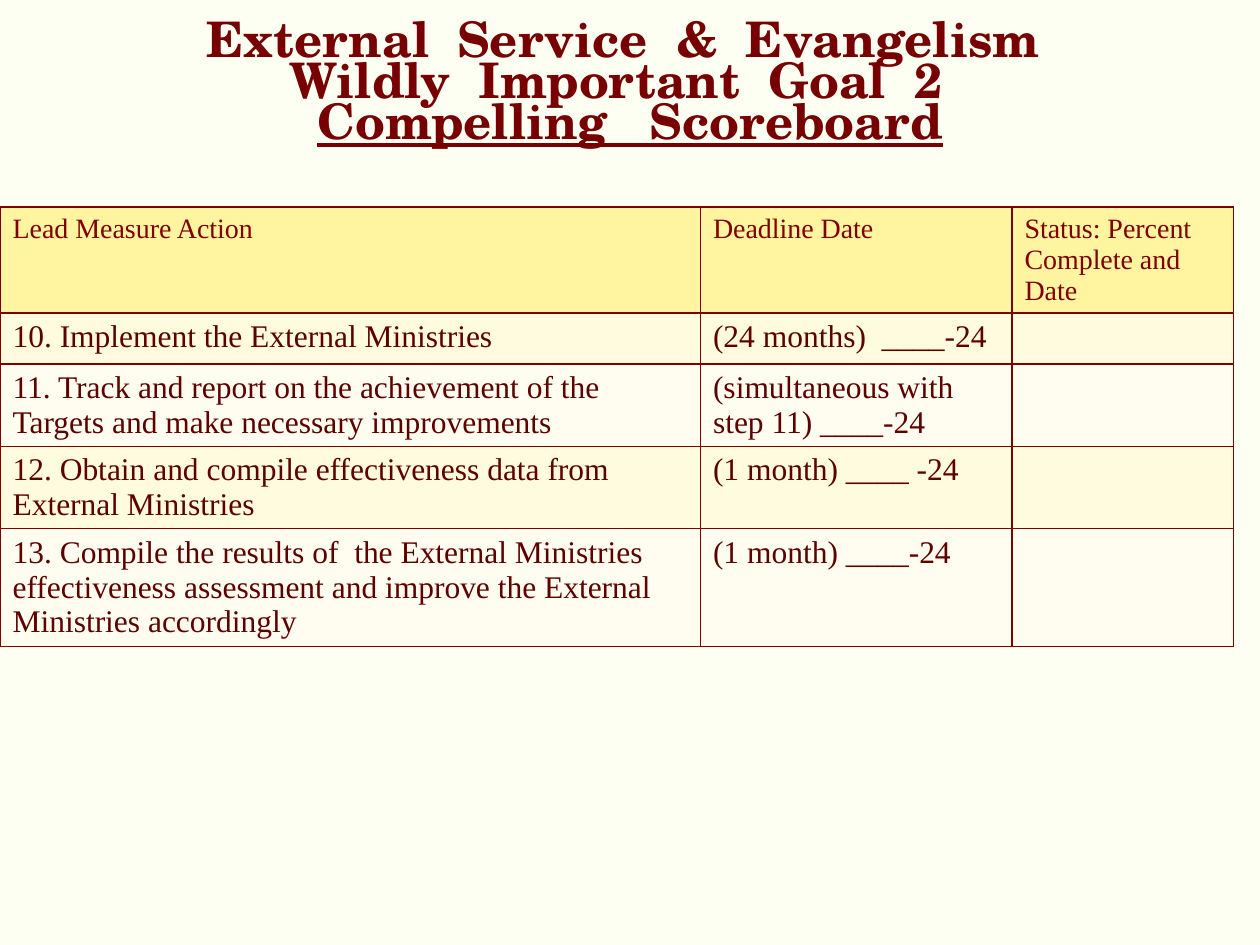
from lxml import etree
from pptx import Presentation
from pptx import util as u
from pptx.dml.color import RGBColor
from pptx.enum import text
from pptx.oxml.ns import qn

BORDER = "800000"
HEADER_FILL = "FFF4A0"
BAND_FILLS = ("FFFBDF", "FFFDF0")

COLUMN_WIDTHS = (14.12, 6.28, 4.47)
ROW_HEIGHTS = (2.13, 1.03, 1.66, 1.66, 2.37)
HEADERS = ("Lead Measure Action", "Deadline Date", "Status: Percent Complete and Date")
ACTIONS = (
    ("10. Implement the External Ministries", "(24 months)  ____-24", ""),
    ("11. Track and report on the achievement of the Targets and make necessary improvements",
     "(simultaneous with step 11) ____-24", ""),
    ("12. Obtain and compile effectiveness data from External Ministries",
     "(1 month) ____ -24", ""),
    ("13. Compile the results of  the External Ministries effectiveness assessment "
     "and improve the External Ministries accordingly", "(1 month) ____-24", ""),
)


def colour(code):
    return RGBColor.from_string(code)


def write_text(para, words, font="Times New Roman", size=18, shade="5D0100",
               bold=False, underline=False, align=None, spacing=None):
    para.alignment = align
    para.line_spacing = spacing
    if not words:
        para.font.size = u.Pt(size)
        return
    span = para.add_run()
    span.text = words
    span.font.name = font
    span.font.size = u.Pt(size)
    span.font.bold = bold
    span.font.underline = underline
    span.font.color.rgb = colour(shade)


def add_borders(cell):
    properties = cell._tc.get_or_add_tcPr()
    for side in ("lnL", "lnR", "lnT", "lnB"):
        line = etree.SubElement(properties, qn("a:" + side), w=str(u.Pt(1)))
        fill = etree.SubElement(line, qn("a:solidFill"))
        etree.SubElement(fill, qn("a:srgbClr"), val=BORDER)


def format_title(title):
    title.left, title.top = u.Cm(2.72), u.Cm(0.15)
    title.width, title.height = u.Cm(19.96), u.Cm(3.18)
    frame = title.text_frame
    frame.word_wrap = True
    frame.auto_size = text.MSO_AUTO_SIZE.NONE
    frame.vertical_anchor = text.MSO_ANCHOR.MIDDLE
    style = dict(font="TeX Gyre Schola", size=28, shade="760002", bold=True,
                 align=text.PP_ALIGN.CENTER, spacing=0.7)
    write_text(frame.paragraphs[0],
               "External  Service  &  Evangelism  Wildly  Important  Goal  2  ", **style)
    write_text(frame.add_paragraph(), "Compelling   Scoreboard", underline=True, **style)


def add_scoreboard(page):
    rows = (HEADERS, *ACTIONS)
    table = page.shapes.add_table(
        len(rows), len(HEADERS), u.Cm(0), u.Cm(4.17),
        u.Cm(sum(COLUMN_WIDTHS)), u.Cm(sum(ROW_HEIGHTS))).table
    table.first_row = table.horz_banding = False
    for column, width in zip(table.columns, COLUMN_WIDTHS):
        column.width = u.Cm(width)
    for index, (row, height, entries) in enumerate(zip(table.rows, ROW_HEIGHTS, rows)):
        row.height = u.Cm(height)
        is_header = index == 0
        style = dict(size=16, shade=BORDER) if is_header else {}
        fill = HEADER_FILL if is_header else BAND_FILLS[(index - 1) % 2]
        for cell, words in zip(row.cells, entries):
            add_borders(cell)
            cell.fill.solid()
            cell.fill.fore_color.rgb = colour(fill)
            write_text(cell.text_frame.paragraphs[0], words, **style)


def main():
    deck = Presentation()
    deck.slide_width, deck.slide_height = u.Cm(25.4), u.Cm(19.05)
    page = deck.slides.add_slide(deck.slide_layouts[5])
    page.background.fill.solid()
    page.background.fill.fore_color.rgb = colour("FEFFF3")
    format_title(page.shapes.title)
    add_scoreboard(page)
    deck.save("out.pptx")


if __name__ == "__main__":
    main()
